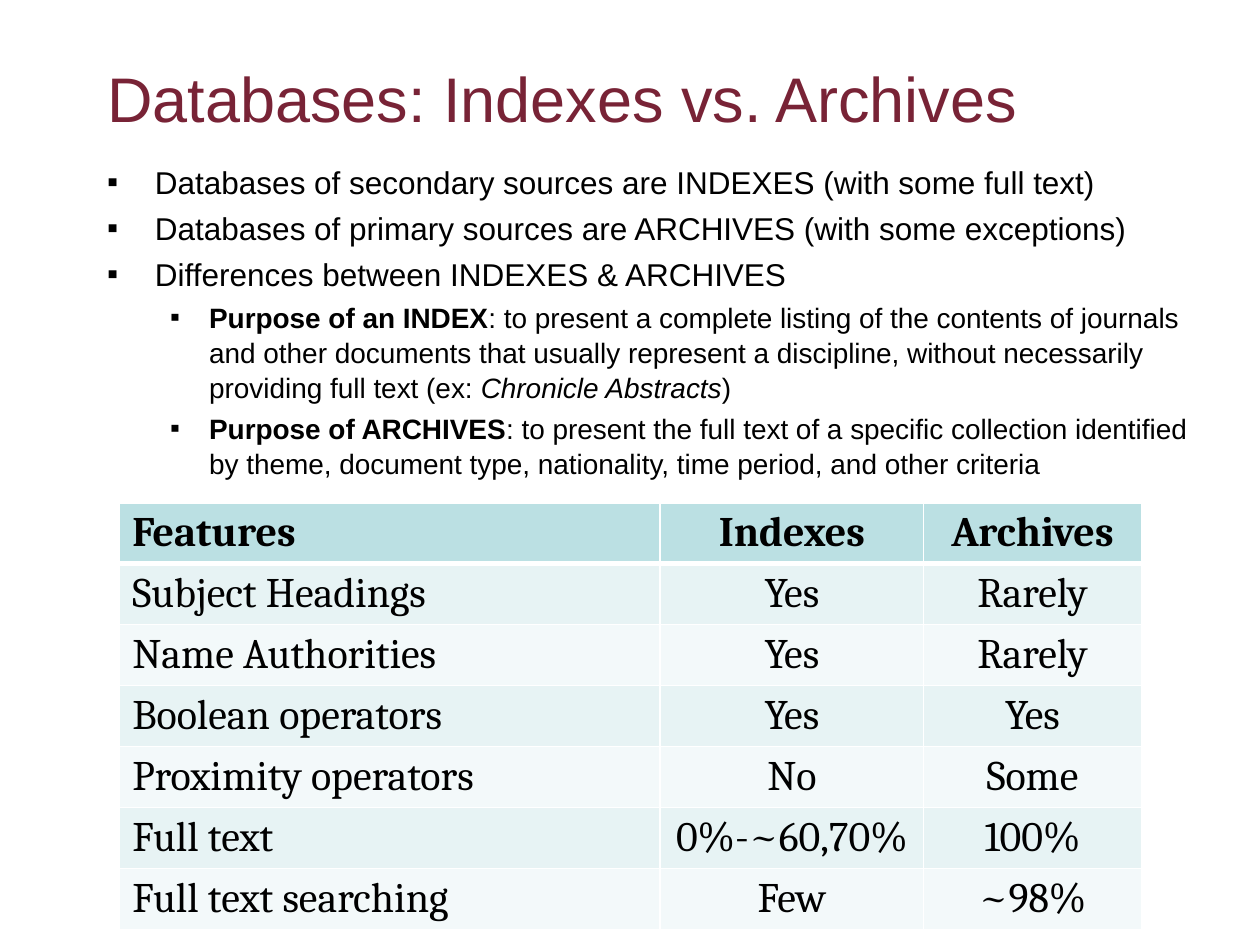
import pptx
import pptx.util
import pptx.dml.color
import pptx.enum.text
import pptx.oxml
import pptx.oxml.ns

Inches, Pt = pptx.util.Inches, pptx.util.Pt
Align, Anchor = pptx.enum.text.PP_ALIGN, pptx.enum.text.MSO_ANCHOR

HUES = {"title": "782336", "text": "000000", "head": "BBE0E3",
        "odd": "E7F3F4", "even": "F3F9FA", "rule": "FFFFFF"}
FONTS = {
    "title": {"name": "Arial", "size": Pt(36), "bold": False},
    "point": {"name": "Arial", "size": Pt(18), "bold": False},
    "sub": {"name": "Arial", "size": Pt(16), "bold": False},
    "head": {"name": "Cambria", "size": Pt(24), "bold": True},
    "cell": {"name": "Cambria", "size": Pt(24), "bold": False},
}
LEVELS = [
    {"font": "point", "left": 0.38, "hang": 0.38, "gap": 3.6},
    {"font": "sub", "left": 0.81, "hang": 0.31, "gap": 3.2},
]
POINTS = [
    (0, [("Databases of secondary sources are INDEXES (with some full text)", {})]),
    (0, [("Databases of primary sources are ARCHIVES (with some exceptions)", {})]),
    (0, [("Differences between INDEXES & ARCHIVES", {})]),
    (1, [("Purpose of an INDEX", {"bold": True}),
         (": to present a complete listing of the contents of journals and other "
          "documents that usually represent a discipline, without necessarily "
          "providing full text (ex: ", {}),
         ("Chronicle Abstracts", {"italic": True}), (")", {})]),
    (1, [("Purpose of ARCHIVES", {"bold": True}),
         (": to present the full text of a specific collection identified by theme, "
          "document type, nationality, time period, and other criteria", {})]),
]
ROWS = [
    ("Features", "Indexes", "Archives"),
    ("Subject Headings", "Yes", "Rarely"),
    ("Name Authorities", "Yes", "Rarely"),
    ("Boolean operators", "Yes", "Yes"),
    ("Proximity operators", "No", "Some"),
    ("Full text", "0%-~60,70%", "100%"),
    ("Full text searching", "Few", "~98%"),
]
COLS = [4.29, 2.09, 1.73]


def adorn(item, values):
    """Set each named value on an object."""
    for key, value in values.items():
        setattr(item, key, value)


def color(hue):
    """Give the colour for a named hue."""
    return pptx.dml.color.RGBColor.from_string(HUES[hue])


def write(para, text, font, hue="text", extra=None):
    """Add one formatted run to a paragraph."""
    run = para.add_run()
    run.text = text
    adorn(run.font, {**FONTS[font], **(extra or {})})
    run.font.color.rgb = color(hue)


def place(shape, box):
    """Move a placeholder to a box and fix its text frame."""
    adorn(shape, dict(zip(("left", "top", "width", "height"), map(Inches, box))))
    adorn(shape.text_frame, {"word_wrap": True, "vertical_anchor": Anchor.TOP,
                             "auto_size": pptx.enum.text.MSO_AUTO_SIZE.NONE})


def bullet(para, level):
    """Give a paragraph a square bullet and hanging indent."""
    props = para._p.get_or_add_pPr()
    props.set("marL", str(Inches(level["left"])))
    props.set("indent", str(-Inches(level["hang"])))
    for tag, key, value in (("buFont", "typeface", "Arial"), ("buChar", "char", "▪")):
        node = pptx.oxml.parse_xml(f'<a:{tag} {pptx.oxml.ns.nsdecls("a")} {key}="{value}"/>')
        props.append(node)


def head(shape, box):
    """Fill the title placeholder."""
    place(shape, box)
    para = shape.text_frame.paragraphs[0]
    para.alignment = Align.LEFT
    write(para, "Databases: Indexes vs. Archives", "title", "title")


def points(shape, box):
    """Fill the body placeholder with the two-level list."""
    place(shape, box)
    frame = shape.text_frame
    for num, (depth, runs) in enumerate(POINTS):
        para = frame.add_paragraph() if num else frame.paragraphs[0]
        level = LEVELS[depth]
        adorn(para, {"level": depth, "line_spacing": 1.05,
                     "space_before": Pt(level["gap"] if num else 0)})
        bullet(para, level)
        for text, extra in runs:
            write(para, text, level["font"], extra=extra)


def edge(cell, sides):
    """Draw the cell borders, with a width in points for each side."""
    props = cell._tc.get_or_add_tcPr()
    for num, (side, width) in enumerate(sides.items()):
        props.insert(num, pptx.oxml.parse_xml(
            f'<a:ln{side} {pptx.oxml.ns.nsdecls("a")} w="{Pt(width)}"><a:solidFill>'
            f'<a:srgbClr val="{HUES["rule"]}"/></a:solidFill></a:ln{side}>'))


def grid(slide, box):
    """Draw the table of features in a box."""
    table = slide.shapes.add_table(len(ROWS), len(COLS), *map(Inches, box)).table
    for col, width in zip(table.columns, COLS):
        col.width = Inches(width)
    for row, texts in enumerate(ROWS):
        table.rows[row].height = Inches(box[3] / len(ROWS))
        hue = ("odd" if row % 2 else "even") if row else "head"
        for col, text in enumerate(texts):
            cell = table.cell(row, col)
            cell.fill.solid()
            cell.fill.fore_color.rgb = color(hue)
            edge(cell, {"L": 1, "R": 1, "T": 3 if row == 1 else 1, "B": 1 if row else 3})
            para = cell.text_frame.paragraphs[0]
            para.alignment = Align.CENTER if col else Align.LEFT
            write(para, text, "cell" if row else "head")


def main():
    """Build and save the slide."""
    deck = pptx.Presentation()
    adorn(deck, {"slide_width": Inches(10), "slide_height": Inches(7.5)})
    slide = deck.slides.add_slide(deck.slide_layouts[1])
    head(slide.shapes.title, (0.75, 0.42, 8.5, 1.25))
    points(slide.placeholders[1], (0.75, 1.23, 8.82, 5.59))
    grid(slide, (0.95, 3.99, sum(COLS), 2.8))
    deck.save("out.pptx")


if __name__ == "__main__":
    main()
